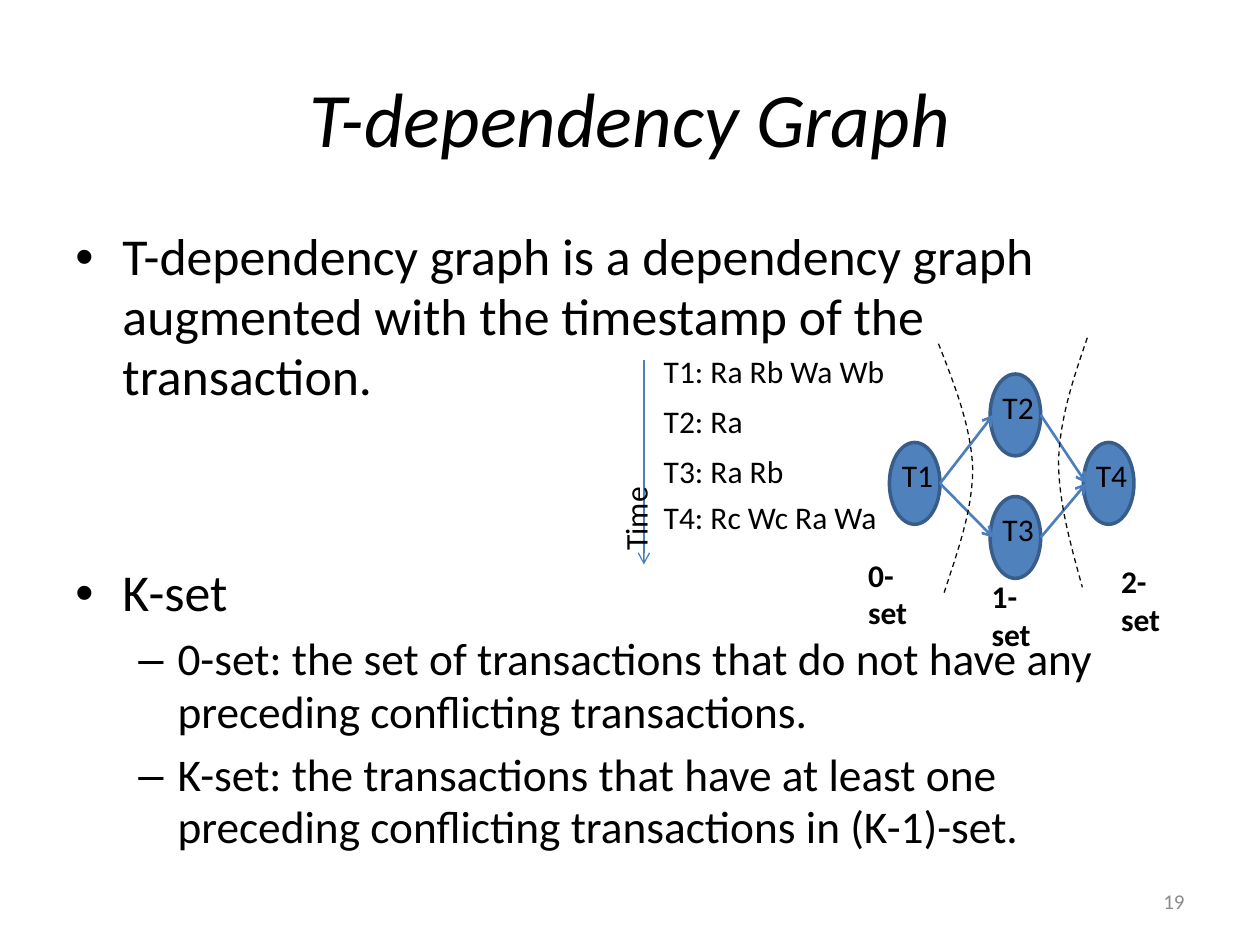
from lxml.etree import SubElement
from pptx import Presentation
from pptx.dml.color import RGBColor
from pptx.enum.dml import MSO_LINE
from pptx.enum.shapes import MSO_CONNECTOR, MSO_SHAPE
from pptx.enum.text import MSO_ANCHOR, PP_ALIGN
from pptx.oxml.ns import qn
from pptx.util import Cm, Pt

COLORS = {"text": "000000", "number": "8C8C8C", "node": "4F81BD",
          "outline": "385D8A", "arrow": "4B7EBC", "boundary": "0D0D0D"}
FONT = "Calibri"

# Positions are in centimetres.
TITLE = "T-dependency Graph"
# text, level, space before in points
BULLETS = [
    ("T-dependency graph is a dependency graph augmented with the timestamp of the transaction.", 0, 6),
    ("K-set", 0, 89),
    ("0-set: the set of transactions that do not have any preceding conflicting transactions.", 1, 5.5),
    ("K-set: the transactions that have at least one preceding conflicting transactions in (K-1)-set.", 1, 5.5),
]
# mark, size, left margin, hanging indent
LEVELS = [("•", 29.6, 0.95, 0.95), ("–", 25.9, 2.06, 0.79)]
# text, top, width
SCHEDULE = [("T1: Ra Rb Wa Wb", 6.99, 4.85), ("T2: Ra", 8.0, 2.06),
            ("T3: Ra Rb", 9.02, 2.84), ("T4: Rc Wc Ra Wa", 9.93, 4.72)]
NODES = {"T1": (17.93, 8.92), "T2": (19.96, 7.54),
         "T3": (19.96, 10.01), "T4": (21.84, 8.92)}
NODE_WIDTH, NODE_HEIGHT = 1.02, 1.65
EDGES = [("T1", "T2"), ("T1", "T3"), ("T2", "T4"), ("T3", "T4")]
SET_LABELS = [("0-set", 17.25, 11.07), ("1-set", 19.74, 11.51), ("2-set", 22.35, 11.2)]
# Each boundary is two Bezier curves that share their middle point.
BOUNDARIES = [
    [(18.92, 6.93), (19.25, 7.77), (19.58, 8.61), (19.61, 9.45),
     (19.61, 10.29), (19.3, 11.13), (19.02, 11.99)],
    [(21.92, 6.81), (21.64, 7.62), (21.36, 8.46), (21.34, 9.3),
     (21.34, 10.13), (21.59, 11.0), (21.82, 11.84)],
]
TIGHT, NORMAL = (0.18, 0.1), (0.25, 0.13)
CURVE_STEPS = 12


def rgb(name):
    return RGBColor.from_string(COLORS[name])


def write(para, text, size, color="text", **formats):
    span = para.add_run()
    span.text = text
    span.font.color.rgb = rgb(color)
    for key, value in {"name": FONT, "size": Pt(size), **formats}.items():
        setattr(span.font, key, value)


def add_box(page, place, insets=NORMAL, **formats):
    frame = page.shapes.add_textbox(*map(Cm, place)).text_frame
    across, down = map(Cm, insets)
    settings = {"margin_left": across, "margin_right": across,
                "margin_top": down, "margin_bottom": down, **formats}
    for key, value in settings.items():
        setattr(frame, key, value)
    return frame


def add_label(page, text, place, insets=TIGHT, **formats):
    frame = add_box(page, place, insets, word_wrap=False)
    write(frame.paragraphs[0], text, 18, **formats)
    return frame


def add_arrow(page, start, end, width):
    arrow = page.shapes.add_connector(MSO_CONNECTOR.STRAIGHT, *map(Cm, start + end))
    arrow.line.color.rgb = rgb("arrow")
    arrow.line.width = Pt(width)
    SubElement(arrow.line._get_or_add_ln(), qn("a:tailEnd"), type="arrow")
    SubElement(arrow._element.spPr, qn("a:effectLst"))


def add_bullets(page):
    frame = add_box(page, (1.27, 4.45, 22.86, 12.57), word_wrap=True)
    for index, (text, level, space) in enumerate(BULLETS):
        para = frame.add_paragraph() if index else frame.paragraphs[0]
        mark, size, margin, hanging = LEVELS[level]
        para.level = level
        para.space_before = Pt(space)
        para.line_spacing = 0.97
        properties = para._p.get_or_add_pPr()
        properties.set("marL", str(Cm(margin)))
        properties.set("indent", str(-Cm(hanging)))
        SubElement(properties, qn("a:buFont"), typeface="Arial")
        SubElement(properties, qn("a:buChar"), char=mark)
        write(para, text, size)


def add_node(page, name):
    left, top = NODES[name]
    node = page.shapes.add_shape(MSO_SHAPE.OVAL, Cm(left), Cm(top),
                                 Cm(NODE_WIDTH), Cm(NODE_HEIGHT))
    node.shadow.inherit = False
    node.fill.solid()
    node.fill.fore_color.rgb = rgb("node")
    node.line.color.rgb = rgb("outline")
    node.line.width = Pt(2)
    add_label(page, name, (left + 0.07, top + 0.18, 1.12, 1.04))


def bezier(points, t):
    weights = ((1 - t) ** 3, 3 * t * (1 - t) ** 2, 3 * t ** 2 * (1 - t), t ** 3)
    return tuple(Cm(sum(w * p[axis] for w, p in zip(weights, points))) for axis in (0, 1))


def add_boundary(page, controls):
    points = [bezier(half, step / CURVE_STEPS)
              for half in (controls[:4], controls[3:])
              for step in range(1, CURVE_STEPS + 1)]
    builder = page.shapes.build_freeform(*map(Cm, controls[0]))
    builder.add_line_segments(points, close=False)
    curve = builder.convert_to_shape()
    curve.shadow.inherit = False
    curve.fill.background()
    curve.line.color.rgb = rgb("boundary")
    curve.line.width = Pt(0.75)
    curve.line.dash_style = MSO_LINE.DASH


def add_title(page):
    title = page.shapes.title
    place = {"left": 1.27, "top": 0.76, "width": 22.86, "height": 3.18}
    for key, value in place.items():
        setattr(title, key, Cm(value))
    title.text_frame.vertical_anchor = MSO_ANCHOR.MIDDLE
    para = title.text_frame.paragraphs[0]
    para.alignment = PP_ALIGN.CENTER
    write(para, TITLE, 44, italic=True)


def main():
    deck = Presentation()
    deck.slide_width, deck.slide_height = Cm(25.4), Cm(19.05)
    page = deck.slides.add_slide(deck.slide_layouts[5])
    add_title(page)
    add_bullets(page)

    number = add_box(page, (18.21, 17.65, 5.92, 1.02),
                     word_wrap=True, vertical_anchor=MSO_ANCHOR.MIDDLE)
    number.paragraphs[0].alignment = PP_ALIGN.RIGHT
    write(number.paragraphs[0], "19", 12, "number")

    for text, top, width in SCHEDULE:
        add_label(page, text, (13.2, top, width, 1.04))
    for name in NODES:
        add_node(page, name)
    for source, target in EDGES:
        (left, top), (end, end_top) = NODES[source], NODES[target]
        middle = NODE_HEIGHT / 2
        add_arrow(page, (left + NODE_WIDTH, top + middle),
                  (end + 0.06, end_top + middle), 1.5)

    add_arrow(page, (12.98, 7.26), (12.98, 11.38), 0.75)
    time = add_label(page, "Time", (12.24, 9.63, 1.24, 1.57))
    time._txBody.bodyPr.set("vert", "vert270")

    for controls in BOUNDARIES:
        add_boundary(page, controls)
    for text, left, top in SET_LABELS:
        add_label(page, text, (left, top, 1.8, 1.02), NORMAL, bold=True)
    deck.save("out.pptx")


if __name__ == "__main__":
    main()
